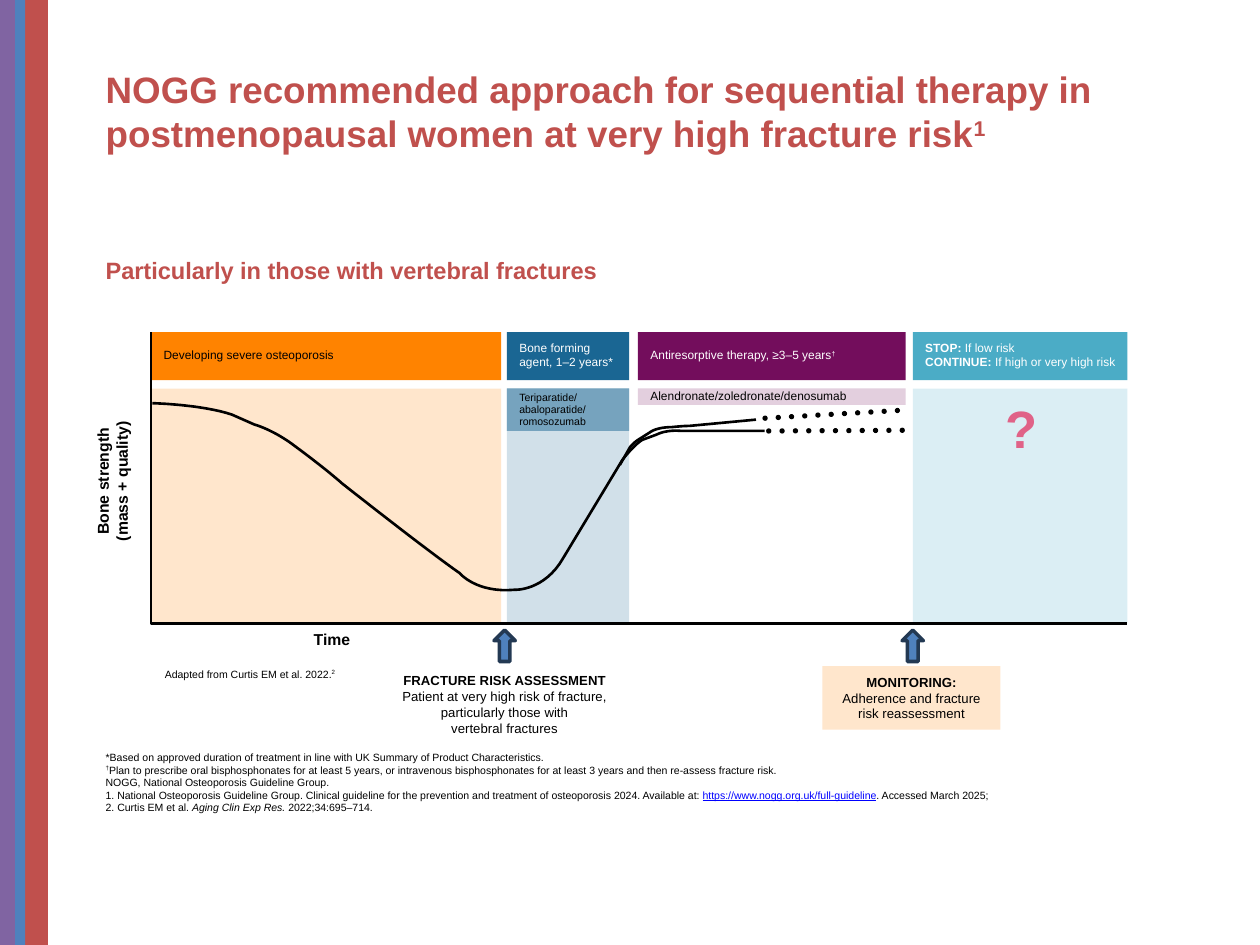
from lxml import etree
from pptx import Presentation
from pptx.dml.color import RGBColor
from pptx.enum.shapes import MSO_SHAPE
from pptx.enum.text import MSO_ANCHOR, PP_ALIGN
from pptx.oxml.ns import qn
from pptx.util import Pt

RECT, OVAL, ARROW = MSO_SHAPE.RECTANGLE, MSO_SHAPE.OVAL, MSO_SHAPE.RIGHT_ARROW
TOP, MID, LOW = MSO_ANCHOR.TOP, MSO_ANCHOR.MIDDLE, MSO_ANCHOR.BOTTOM
LEFT, MIDDLE = PP_ALIGN.LEFT, PP_ALIGN.CENTER

THEME = {
    "font": "Arial",
    "red": "C0504D", "blue": "4F81BD", "purple": "8064A2", "navy": "233953",
    "black": "000000", "white": "FFFFFF", "link": "0000FF", "pink": "E06287",
    "orange": "FF8300", "peach": "FFE6CC", "steel": "1A6693", "mist": "D1E0E9",
    "slate": "76A3BE", "plum": "730D5C", "lilac": "E3CFDE",
    "teal": "4BACC6", "ice": "DBEEF4",
    "title": 21, "lead": 13.5, "axis": 9, "call": 7.5, "head": 6.8,
    "note": 6, "mark": 30,
}
BOLD = {"bold": True}
SUP = {"sup": True}

deck = Presentation()
deck.slide_width, deck.slide_height = Pt(720), Pt(540)
slide = deck.slides.add_slide(deck.slide_layouts[6])
shapes = slide.shapes


def block(kind, x, y, w, h, fill):
    """Add a plain filled shape without outline or shadow."""
    shape = shapes.add_shape(kind, Pt(x), Pt(y), Pt(w), Pt(h))
    shape.shadow.inherit = False
    shape.fill.solid()
    shape.fill.fore_color.rgb = RGBColor.from_string(THEME[fill])
    shape.line.fill.background()
    return shape


def write(shape, size, ink, runs, align=LEFT, anchor=TOP, pad=(0, 0, 0, 0), space=1.0):
    """Fill a shape with runs of (text, format); a newline is a line break."""
    frame = shape.text_frame
    frame.word_wrap, frame.vertical_anchor = True, anchor
    for side, gap in zip(("left", "top", "right", "bottom"), pad):
        setattr(frame, f"margin_{side}", Pt(gap))
    para = frame.paragraphs[0]
    para.alignment, para.line_spacing = align, space
    points = Pt(THEME[size])
    for text, form in runs:
        for turn, piece in enumerate(text.split("\n")):
            if turn:
                para.add_line_break()
                etree.SubElement(para._p[-1], qn("a:rPr"), sz=str(int(points.pt * 100)))
            if not piece:
                continue
            run = para.add_run()
            run.text = piece
            base = {"name": THEME["font"], "size": points, "bold": False}
            for key, value in {**base, **form}.items():
                if key == "sup":
                    run._r.get_or_add_rPr().set("baseline", "30000")
                elif key == "ink":
                    continue
                else:
                    setattr(run.font, key, value)
            tone = THEME[form.get("ink", ink)]
            run.font.color.rgb = RGBColor.from_string(tone)


# Side stripes
for x, w, fill in ((0, 27.4, "red"), (0, 10, "purple"), (8.6, 5.8, "blue")):
    block(RECT, x, 0, w, 540, fill)

# Columns of the chart: heading above, body below
HEAD, BODY, BASE = 189.8, 222, 356.4
COLS = (
    (86.4, 200, "orange", "peach", "black", [("Developing severe osteoporosis", {})]),
    (289.7, 69.8, "steel", "mist", "white", [("Bone forming\nagent, 1–2 years*", {})]),
    (364.6, 153, "plum", None, "white",
     [("Antiresorptive therapy, ≥3–5 years", {}), ("†", SUP)]),
    (521.6, 122.6, "teal", "ice", "white",
     [("STOP: ", BOLD), ("If low risk\n", {}),
      ("CONTINUE: ", BOLD), ("If high or very high risk", {})]),
)
for x, w, fill, tint, ink, runs in COLS:
    head = block(RECT, x, HEAD, w, 27.4, fill)
    write(head, "head", ink, runs, anchor=MID, pad=(7.2, 2.9, 5, 3.6), space=0.95)
    if tint:
        block(RECT, x, BODY, w, BASE - BODY, tint)

# Drug names
DRUGS = (
    (289.7, 69.8, 24.2, "slate", "note", "Teriparatide/\nabaloparatide/\nromosozumab"),
    (364.6, 153, 9.4, "lilac", "head", "Alendronate/zoledronate/denosumab"),
)
for x, w, h, fill, size, text in DRUGS:
    drug = block(RECT, x, BODY, w, h, fill)
    write(drug, size, "black", [(text, {})], anchor=MID, pad=(7.2, 0, 7.2, 0), space=0.95)

# Bone strength curves and axes: (x, y) is a line,
# (cx, cy, x, y) a curve that leaves its start towards (cx, cy)
PATHS = (
    ((87.1, 230.4), (115.2, 231.1, 132.5, 236.9), (145.4, 242.6),
     (156.2, 245.5, 168.5, 254.9), (184.3, 266.4, 195.8, 276.5),
     (244.1, 314.6, 262.8, 327.6), (272.2, 339.1, 294.5, 337),
     (311, 337.7, 321.8, 319), (355.7, 262.8), (362.2, 254.2, 367.2, 251.3),
     (375.1, 248.4), (380.2, 245.5, 388.8, 246.2), (437, 246.2)),
    ((354.2, 265.7), (360, 255.6), (362.2, 252.7, 365.8, 250.6), (371.5, 247),
     (375.1, 244.1, 383.8, 244.1), (390.2, 243.4, 393.8, 243.4), (432, 239.8)),
    ((86.4, HEAD), (86.4, BASE), (644.2, BASE)),
)
STEPS = 16
for start, *parts in PATHS:
    spots, last = [], start
    for part in parts:
        end = part[-2:]
        if len(part) == 4:
            for step in range(1, STEPS):
                t = step / STEPS
                near, pull = (1 - t) ** 2 * (1 + 2 * t), 3 * (1 - t) * t * t
                spots.append([near * a + pull * c + t ** 3 * b
                              for a, c, b in zip(last, part, end)])
        spots.append(end)
        last = end
    pen = shapes.build_freeform(Pt(start[0]), Pt(start[1]))
    pen.add_line_segments([(Pt(x), Pt(y)) for x, y in spots], close=False)
    curve = pen.convert_to_shape()
    curve.shadow.inherit = False
    curve.fill.background()
    curve.line.width = Pt(1.5)
    curve.line.color.rgb = RGBColor.from_string(THEME["black"])

# Dotted ends of the curves
DOT, COUNT = 3, 11
for x, y, dx, dy in ((435.7, 237.5, 7.56, -0.44), (437.8, 244.8, 7.63, -0.04)):
    for n in range(COUNT):
        block(OVAL, x + n * dx, y + n * dy, DOT, DOT, "black")

# Arrows below the time axis
for x in (279.4, 512.6):
    arrow = block(ARROW, x, 362.9, 18, 12.2, "blue")
    arrow.rotation = 270
    arrow.line.width = Pt(2)
    arrow.line.color.rgb = RGBColor.from_string(THEME["navy"])

# Monitoring box
watch = block(RECT, 470, 380.7, 101.7, 36.2, "peach")
write(watch, "call", "black",
      [("MONITORING:\n", BOLD), ("Adherence and fracture\nrisk reassessment", {})],
      align=MIDDLE, anchor=MID)

# Free text: place, turn, size, ink, align, anchor, pad, runs
INSET, FLUSH = (7.2, 3.6, 7.2, 3.6), (0, 0, 0, 0)
TEXTS = (
    ((53.3, 34.6, 618.5, 86.4), 0, "title", "red", LEFT, TOP, INSET,
     [("NOGG recommended approach for sequential therapy in "
       "postmenopausal women at very high fracture risk", BOLD),
      ("1", {**BOLD, **SUP})]),
    ((53.3, 142.6, 360, 23.8), 0, "lead", "red", LEFT, TOP, INSET,
     [("Particularly in those with vertebral fractures", BOLD)]),
    ((-17.3, 264.2, 162.7, 21.6), 270, "axis", "black", MIDDLE, TOP, FLUSH,
     [("Bone strength\n(mass + quality)", BOLD)]),
    ((86.4, 360, 206.6, 10.8), 0, "axis", "black", MIDDLE, TOP, FLUSH,
     [("Time", BOLD)]),
    ((226, 384.5, 124.6, 36), 0, "call", "black", MIDDLE, TOP, FLUSH,
     [("FRACTURE RISK ASSESSMENT\n", BOLD),
      ("Patient at very high risk of fracture,\nparticularly those with\n"
       "vertebral fractures", {})]),
    ((557.3, 226.1, 52.6, 36), 0, "mark", "pink", MIDDLE, TOP, FLUSH,
     [("?", BOLD)]),
    ((87.1, 378, 139, 14.4), 0, "note", "black", LEFT, TOP, INSET,
     [("Adapted from Curtis EM et al. 2022.", {}), ("2", SUP)]),
    ((53.3, 445.7, 560.2, 23), 0, "note", "black", LEFT, LOW, INSET,
     [("*Based on approved duration of treatment in line with UK Summary of "
       "Product Characteristics.\n", {}),
      ("†", SUP),
      ("Plan to prescribe oral bisphosphonates for at least 5 years, or intravenous "
       "bisphosphonates for at least 3 years and then re-assess fracture risk.\n"
       "NOGG, National Osteoporosis Guideline Group.\n"
       "1. National Osteoporosis Guideline Group. Clinical guideline for the prevention "
       "and treatment of osteoporosis 2024. Available at: ", {}),
      ("https://www.nogg.org.uk/full-guideline", {"underline": True, "ink": "link"}),
      (". Accessed March 2025;\n2. Curtis EM et al. ", {}),
      ("Aging Clin Exp Res.", {"italic": True}),
      (" 2022;34:695–714.", {})]),
)
for place, turn, size, ink, align, anchor, pad, runs in TEXTS:
    label = shapes.add_textbox(*map(Pt, place))
    label.rotation = turn
    write(label, size, ink, runs, align, anchor, pad)

deck.save("out.pptx")
